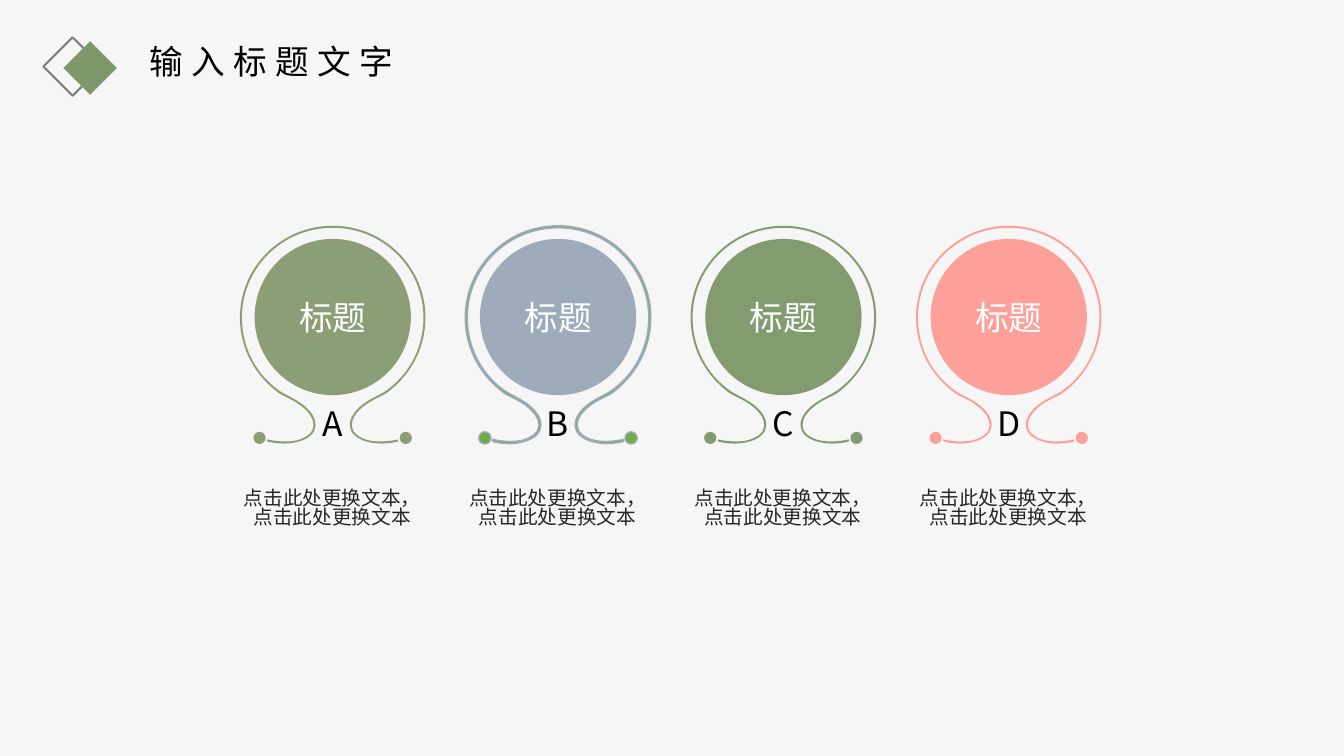
"""Build a slide of four lettered medallions with captions."""
from lxml import etree
from pptx import Presentation
from pptx import util as u
from pptx.dml.color import RGBColor
from pptx.enum import shapes, text
from pptx.oxml.ns import qn

TITLE = "输入标题文字"
CAPTION = "点击此处更换文本，点击此处更换文本"
MEDALLIONS = [
    {"letter": "A", "label": "标题", "disc": "8B9E76", "ring": "8B9E76", "edge": None},
    {"letter": "B", "label": "标题", "disc": "9EABBA", "ring": "70AD47", "edge": "9EABBA"},
    {"letter": "C", "label": "标题", "disc": "829C6F", "ring": "829C6F", "edge": None},
    {"letter": "D", "label": "标题", "disc": "FDA09A", "ring": "FDA09A", "edge": None},
]
FONT = "Noto Sans CJK SC"
WIDTH, HEIGHT = 13.33, 7.5
FIRST_CENTRE, COLUMN = 3.3, 2.235
CENTRE_Y, DISC = 3.145, 1.55
RING_HALF_WIDTH, RING_TOP, RING_BOTTOM = 0.92, 2.24, 4.4
DOT_X, DOT_Y, DOT_RADIUS = 0.725, 4.345, 0.06
HALF_RING = [
    [(0, 2.24)],
    [(0.51, 2.24), (0.92, 2.65), (0.92, 3.15)],
    [(0.92, 3.47), (0.76, 3.74), (0.52, 3.91)],
    [(0.4, 3.97)],
    [(0.18, 4.09), (0.12, 4.26), (0.28, 4.34)],
    [(0.37, 4.39), (0.51, 4.39), (0.65, 4.36)],
    [(0.65, 4.38)],
    [(0.5, 4.42), (0.35, 4.4), (0.26, 4.35)],
    [(0.1, 4.26), (0.16, 4.08), (0.38, 3.96)],
    [(0.51, 3.89)],
    [(0.75, 3.73), (0.9, 3.46), (0.9, 3.15)],
    [(0.9, 2.66), (0.5, 2.26), (0, 2.26)],
]


def colour(hex_string):
    return RGBColor.from_string(hex_string)


def paint(shape, fill=None, edge=None, weight=1):
    shape.shadow.inherit = False
    if fill:
        shape.fill.solid()
        shape.fill.fore_color.rgb = colour(fill)
    else:
        shape.fill.background()
    if edge:
        shape.line.color.rgb = colour(edge)
        shape.line.width = u.Pt(weight)
    else:
        shape.line.fill.background()


def write(shape, words, size, ink, anchor, insets, align=text.PP_ALIGN.CENTER, spacing=None):
    frame = shape.text_frame
    frame.text = words
    frame.word_wrap = True
    frame.vertical_anchor = anchor
    frame.margin_left, frame.margin_top, frame.margin_right, frame.margin_bottom = map(u.Inches, insets)
    paragraph = frame.paragraphs[0]
    paragraph.alignment = align
    if spacing:
        paragraph.line_spacing = spacing
    run = paragraph.runs[0]
    run.font.size = u.Pt(size)
    run.font.name = FONT
    run.font.color.rgb = colour(ink)
    etree.SubElement(run.font._element, qn("a:ea")).set("typeface", FONT)
    return run


def dot_outline():
    pull = 0.55
    quarters = [(1, 0), (0, 1), (-1, 0), (0, -1), (1, 0)]
    unit = [[quarters[0]]]
    for (ax, ay), (bx, by) in zip(quarters, quarters[1:]):
        unit.append([(ax + pull * bx, ay + pull * by), (bx + pull * ax, by + pull * ay), (bx, by)])
    return [[(DOT_X + DOT_RADIUS * x, DOT_Y + DOT_RADIUS * y) for x, y in step] for step in unit]


def draw_ring(slide, centre):
    left, right = (u.Inches(centre + side * RING_HALF_WIDTH) for side in (-1, 1))
    top, bottom = u.Inches(RING_TOP), u.Inches(RING_BOTTOM)
    builder = slide.shapes.build_freeform(left, top, scale=1.0)
    builder.add_line_segments([(right, top), (right, bottom), (left, bottom)], close=True)
    ring = builder.convert_to_shape()
    strokes = ring._element.find(".//" + qn("a:path"))
    for child in list(strokes):
        strokes.remove(child)
    for outline in (dot_outline(), HALF_RING):
        for side in (1, -1):
            for index, step in enumerate(outline):
                tag = "a:moveTo" if index == 0 else "a:lnTo" if len(step) == 1 else "a:cubicBezTo"
                segment = etree.SubElement(strokes, qn(tag))
                for x, y in step:
                    point = etree.SubElement(segment, qn("a:pt"))
                    point.set("x", str(u.Inches(RING_HALF_WIDTH + side * x)))
                    point.set("y", str(u.Inches(y - RING_TOP)))
            etree.SubElement(strokes, qn("a:close"))
    return ring


def place(slide, kind, left, top, size):
    return slide.shapes.add_shape(kind, *map(u.Inches, (left, top, size, size)))


def main():
    deck = Presentation()
    deck.slide_width, deck.slide_height = u.Inches(WIDTH), u.Inches(HEIGHT)
    slide = deck.slides.add_slide(deck.slide_layouts[5])
    slide.background.fill.solid()
    slide.background.fill.fore_color.rgb = colour("F6F6F6")

    heading = slide.shapes.title
    heading.left, heading.top, heading.width, heading.height = map(u.Inches, (1.38, 0.41, 3.6, 0.5))
    run = write(heading, TITLE, 24, "000000", text.MSO_ANCHOR.TOP, (0.1, 0.05, 0.1, 0.05),
                text.PP_ALIGN.LEFT, 0.88)
    run.font._element.set("spc", "600")
    heading.text_frame.auto_size = text.MSO_AUTO_SIZE.NONE

    diamond = shapes.MSO_SHAPE.DIAMOND
    paint(place(slide, diamond, 0.43, 0.37, 0.58), edge="808080", weight=1.5)
    paint(place(slide, diamond, 0.63, 0.41, 0.53), "7E986B")

    for column, medallion in enumerate(MEDALLIONS):
        centre = FIRST_CENTRE + column * COLUMN
        disc = place(slide, shapes.MSO_SHAPE.OVAL, centre - DISC / 2, CENTRE_Y - DISC / 2, DISC)
        paint(disc, medallion["disc"])
        write(disc, medallion["label"], 24, "FFFFFF", text.MSO_ANCHOR.MIDDLE, (0, 0, 0, 0))
        ring = draw_ring(slide, centre)
        paint(ring, medallion["ring"], medallion["edge"])
        write(ring, medallion["letter"], 24, "000000", text.MSO_ANCHOR.BOTTOM, (0.1, 0.05, 0.1, 0))
        caption = slide.shapes.add_textbox(*map(u.Inches, (centre - 1.06, 4.86, 2.11, 1.29)))
        write(caption, CAPTION, 14, "262626", text.MSO_ANCHOR.TOP, (0.1, 0, 0.1, 0), spacing=0.81)

    deck.save("out.pptx")


if __name__ == "__main__":
    main()
